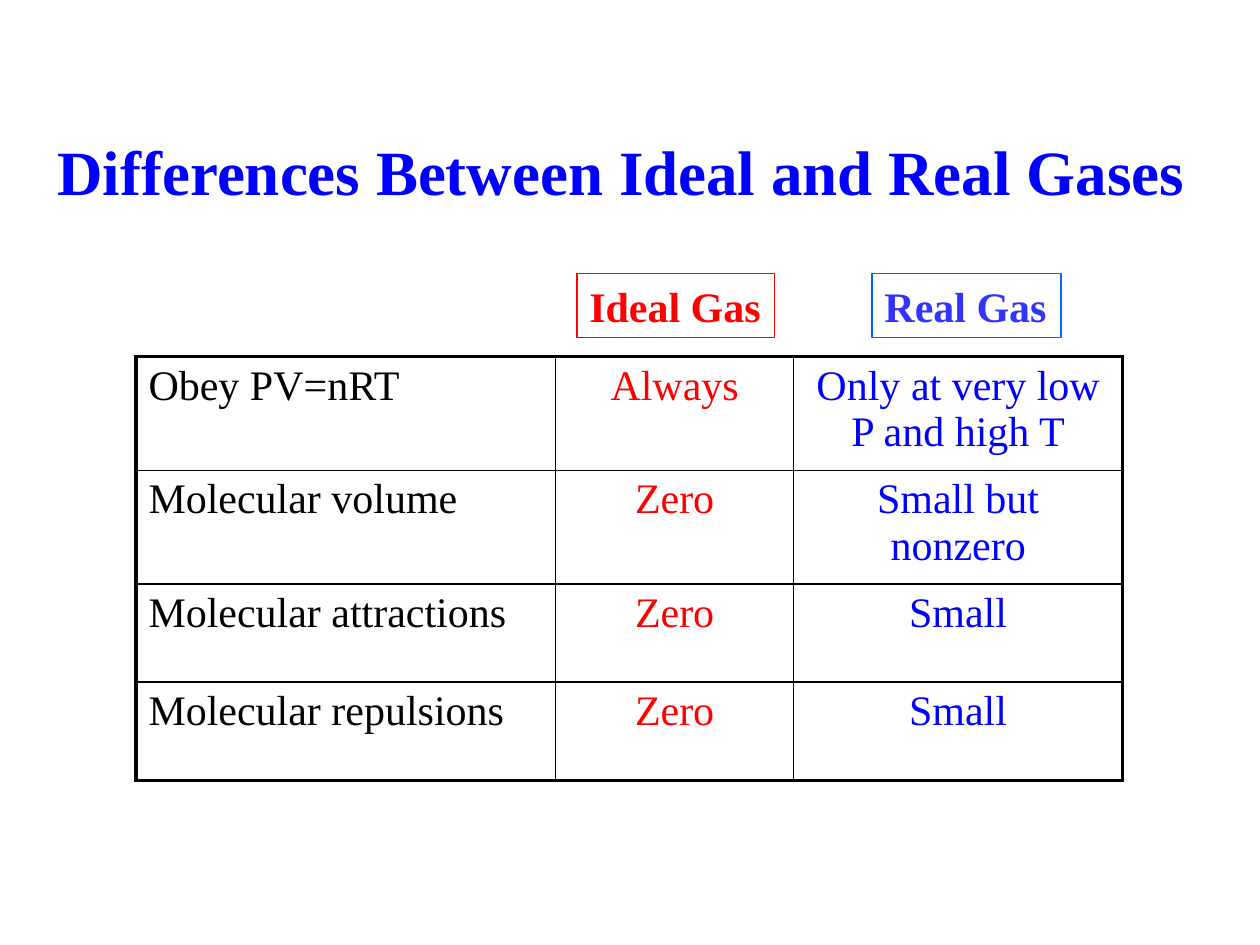
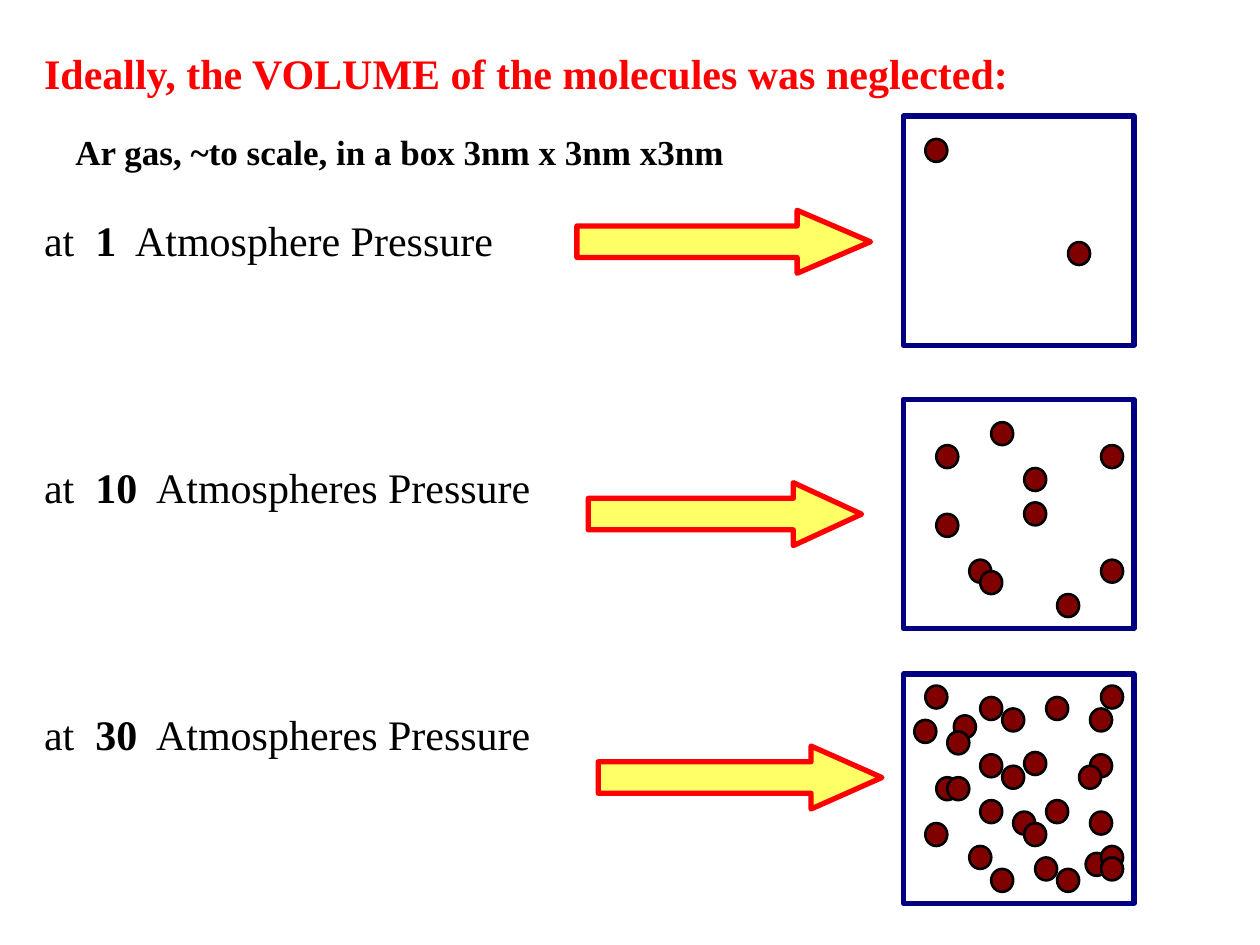
"""Build two slides comparing ideal and real gases."""
import pptx
import pptx.dml.color
import pptx.enum.shapes
import pptx.enum.text
import pptx.util
from lxml import etree
from pptx.oxml.ns import qn

Cm, Pt = pptx.util.Cm, pptx.util.Pt
SHAPE = pptx.enum.shapes.MSO_SHAPE
ALIGN = pptx.enum.text.PP_ALIGN
ANCHOR = pptx.enum.text.MSO_ANCHOR

COLORS = {
    "black": "000000", "white": "FFFFFF", "red": "FF0000", "blue": "0000FF",
    "violet": "3333FF", "azure": "0066FF", "navy": "000080",
    "maroon": "800000", "yellow": "FFFF66",
}
FONT = "Times New Roman"

TITLE = "Differences Between Ideal and Real Gases"
GAS_LABELS = [
    ("Ideal Gas", (11.63, 5.51, 3.99, 1.3), "red", "red"),
    ("Real Gas", (17.58, 5.51, 3.81, 1.3), "violet", "azure"),
]
GAS_ROWS = [
    ("Obey PV=nRT", "Always", "Only at very low P and high T"),
    ("Molecular volume", "Zero", "Small but nonzero"),
    ("Molecular attractions", "Zero", "Small"),
    ("Molecular repulsions", "Zero", "Small"),
]
TABLE_AT = (2.74, 7.19)
COLUMNS = [(8.46, "black", ALIGN.LEFT), (4.8, "red", ALIGN.CENTER), (6.63, "blue", ALIGN.CENTER)]
ROW_HEIGHTS = [2.29, 2.29, 1.98, 1.98]

HEADLINE = "Ideally, the VOLUME of the molecules was neglected:"
SCALE_NOTE = "Ar gas, ~to scale, in a box 3nm x 3nm x3nm"
PRESSURES = [
    ("1", "Atmosphere", 60.6),
    ("10", "Atmospheres", 106.6),
    ("30", "Atmospheres", 106.6),
]
ARROWS = [(11.63, 4.24, 5.92), (11.86, 9.73, 5.51), (12.06, 15.04, 5.72)]
ARROW_HEIGHT = 1.27
BOX_LEFT, BOX_WIDTH, BOX_HEIGHT = 18.21, 4.65, 4.62
GRID_COLUMNS, GRID_ROWS, ATOM_CELLS = 21, 20, 2
GAS_BOXES = [
    (2.34, [(2, 2), (15, 11)]),
    (8.05, [(3, 4), (3, 10), (8, 2), (11, 9), (14, 17), (6, 14), (11, 6), (7, 15),
            (18, 4), (18, 14)]),
    (13.59, [(2, 1), (9, 3), (4.6, 3.6), (7, 2), (17, 7), (11, 6.8), (9, 8), (16, 8),
             (17, 12), (13, 11), (18, 1), (16.6, 15.6), (18, 15), (18, 16), (1, 4),
             (4, 5), (3, 9), (7, 7), (2, 13), (7, 11), (6, 15), (10, 12), (8, 17),
             (11, 13), (4, 9), (14, 17), (12, 16), (17, 3), (13, 2)]),
]


def rgb(name):
    return pptx.dml.color.RGBColor.from_string(COLORS[name])


def write(p, text, color="black", **fmt):
    r = p.add_run()
    r.text = text
    for key, value in {"name": FONT, "size": Pt(24), "bold": False, **fmt}.items():
        setattr(r.font, key, value)
    r.font.color.rgb = rgb(color)


def add_text(slide, at, wrap=True):
    tf = slide.shapes.add_textbox(*map(Cm, at)).text_frame
    tf.word_wrap = wrap
    return tf


def add_shape(shapes, kind, at, line, width, fill=None):
    sp = shapes.add_shape(kind, *map(Cm, at))
    sp.shadow.inherit = False
    sp.line.color.rgb = rgb(line)
    sp.line.width = Pt(width)
    if fill:
        sp.fill.solid()
        sp.fill.fore_color.rgb = rgb(fill)
    else:
        sp.fill.background()
    return sp


def set_borders(cell, outer):
    tcPr = cell._tc.get_or_add_tcPr()
    for i, (side, is_outer) in enumerate(outer.items()):
        ln = etree.Element(qn("a:" + side), w=str(Pt(2.25 if is_outer else 1)))
        fill = etree.SubElement(ln, qn("a:solidFill"))
        etree.SubElement(fill, qn("a:srgbClr"), val=COLORS["black"])
        tcPr.insert(i, ln)


def add_gas_table(slide):
    n_rows, n_cols = len(GAS_ROWS), len(COLUMNS)
    size = (sum(c[0] for c in COLUMNS), sum(ROW_HEIGHTS))
    table = slide.shapes.add_table(n_rows, n_cols, *map(Cm, TABLE_AT + size)).table
    table.first_row = table.horz_banding = False
    for i, (texts, height) in enumerate(zip(GAS_ROWS, ROW_HEIGHTS)):
        table.rows[i].height = Cm(height)
        for j, (text, (width, color, align)) in enumerate(zip(texts, COLUMNS)):
            table.columns[j].width = Cm(width)
            cell = table.cell(i, j)
            cell.fill.background()
            p = cell.text_frame.paragraphs[0]
            p.alignment = align
            write(p, text, color)
            set_borders(cell, {"lnL": j == 0, "lnR": j == n_cols - 1,
                               "lnT": i == 0, "lnB": i == n_rows - 1})


def build_differences(slide):
    tf = add_text(slide, (0.91, 2.54, 23.57, 1.78), wrap=False)
    write(tf.paragraphs[0], TITLE, "blue", size=Pt(36), bold=True)
    add_gas_table(slide)
    for text, at, color, line in GAS_LABELS:
        tf = add_shape(slide.shapes, SHAPE.RECTANGLE, at, line, 0.75).text_frame
        tf.word_wrap = False
        tf.vertical_anchor = ANCHOR.MIDDLE
        p = tf.paragraphs[0]
        p.alignment = ALIGN.LEFT
        write(p, text, color, bold=True)


def add_gas_box(slide, top, atoms):
    shapes = slide.shapes.add_group_shape().shapes
    add_shape(shapes, SHAPE.RECTANGLE, (BOX_LEFT, top, BOX_WIDTH, BOX_HEIGHT),
              "navy", 3, "white")
    dx, dy = BOX_WIDTH / GRID_COLUMNS, BOX_HEIGHT / GRID_ROWS
    for col, row in atoms:
        at = (BOX_LEFT + col * dx, top + row * dy, ATOM_CELLS * dx, ATOM_CELLS * dy)
        add_shape(shapes, SHAPE.FLOWCHART_CONNECTOR, at, "black", 1.5, "maroon")


def build_volume(slide):
    for top, atoms in GAS_BOXES:
        add_gas_box(slide, top, atoms)
    for left, top, width in ARROWS:
        sp = add_shape(slide.shapes, SHAPE.RIGHT_ARROW, (left, top, width, ARROW_HEIGHT),
                       "red", 3, "yellow")
        sp.adjustments[1] = width / ARROW_HEIGHT / 4
    tf = add_text(slide, (0.64, 0.64, 23.29, 15.27))
    tf.paragraphs[0].line_spacing = 1.2
    write(tf.paragraphs[0], HEADLINE, "red", bold=True)
    for number, unit, gap in PRESSURES:
        p = tf.add_paragraph()
        p.line_spacing = 1.2
        p.space_before = Pt(gap)
        write(p, "at  ")
        write(p, number, bold=True)
        write(p, f"  {unit} Pressure")
    p = add_text(slide, (1.27, 2.34, 16.31, 1.27)).paragraphs[0]
    p.line_spacing = 1.2
    write(p, SCALE_NOTE, size=Pt(20), bold=True)


def main():
    prs = pptx.Presentation()
    prs.slide_width, prs.slide_height = Cm(25.4), Cm(19.05)
    for build in (build_differences, build_volume):
        build(prs.slides.add_slide(prs.slide_layouts[6]))
    prs.save("out.pptx")


if __name__ == "__main__":
    main()
